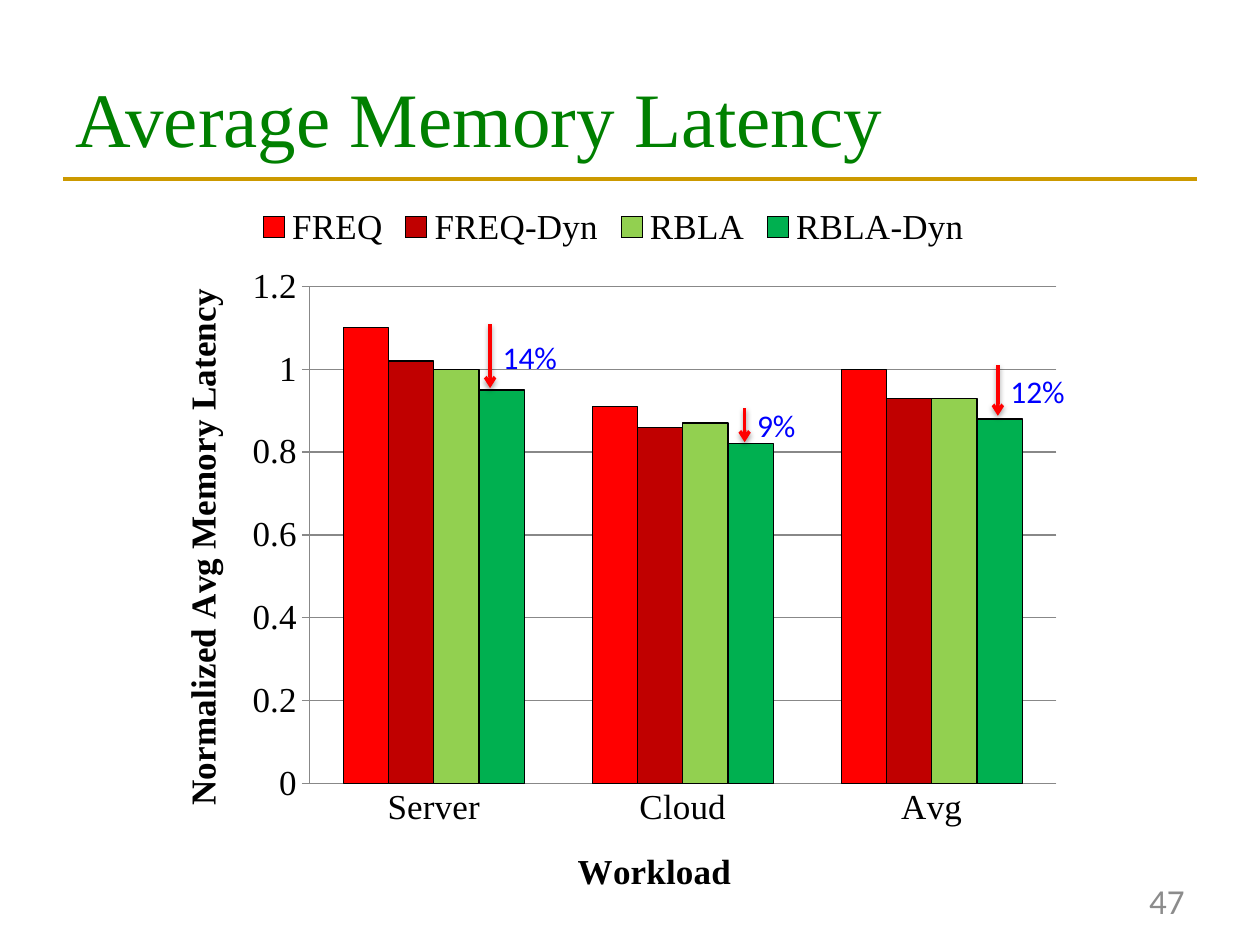
"""Build the average memory latency slide with its clustered column chart."""
from dataclasses import dataclass

from lxml.etree import SubElement
from pptx import Presentation
from pptx.chart.data import CategoryChartData
from pptx.dml.color import RGBColor
from pptx.enum.chart import XL_CHART_TYPE, XL_LEGEND_POSITION, XL_TICK_MARK
from pptx.enum.shapes import MSO_CONNECTOR
from pptx.enum.text import MSO_ANCHOR, PP_ALIGN
from pptx.oxml import parse_xml
from pptx.oxml.ns import nsdecls, qn
from pptx.util import Inches, Pt


@dataclass(frozen=True)
class Theme:
    serif: str = "Times New Roman"
    sans: str = "Calibri"
    title: str = "008000"
    rule: str = "CC9900"
    ink: str = "000000"
    grid: str = "888888"
    number: str = "8C8C8C"
    arrow: str = "FF0000"
    reduction: str = "0000FF"
    title_size: int = 44
    chart_size: int = 20
    reduction_size: int = 18


theme = Theme()


def add_run(paragraph, text, font_name, size, color, bold=False):
    run = paragraph.add_run()
    run.text = text
    run.font.name = font_name
    run.font.size = Pt(size)
    run.font.bold = bold
    run.font.color.rgb = RGBColor.from_string(color)


def add_line(slide, start, end, color, width):
    points = [Inches(value) for value in (*start, *end)]
    line = slide.shapes.add_connector(MSO_CONNECTOR.STRAIGHT, *points)
    line.line.color.rgb = RGBColor.from_string(color)
    line.line.width = Pt(width)
    effects = SubElement(line._element.spPr, qn("a:effectLst"))
    return line, effects


presentation = Presentation()
presentation.slide_width = Inches(10)
presentation.slide_height = Inches(7.5)
slide = presentation.slides.add_slide(presentation.slide_layouts[5])

add_line(slide, (0.5, 1.42), (9.5, 1.42), theme.rule, 2.25)

title = slide.shapes.title
title.left, title.top = Inches(0.5), Inches(0.3)
title.width, title.height = Inches(9), Inches(1.25)
title.text_frame.vertical_anchor = MSO_ANCHOR.MIDDLE
paragraph = title.text_frame.paragraphs[0]
paragraph.alignment = PP_ALIGN.LEFT
add_run(paragraph, "Average Memory Latency", theme.serif, theme.title_size, theme.title)

series_styles = [
    ("FREQ", (1.1, 0.91, 1), "FF0000"),
    ("FREQ-Dyn", (1.02, 0.86, 0.93), "C00000"),
    ("RBLA", (1, 0.87, 0.93), "92D050"),
    ("RBLA-Dyn", (0.95, 0.82, 0.88), "00B050"),
]
chart_data = CategoryChartData()
chart_data.categories = ["Server", "Cloud", "Avg"]
for name, values, color in series_styles:
    chart_data.add_series(name, values)
chart = slide.shapes.add_chart(
    XL_CHART_TYPE.COLUMN_CLUSTERED,
    Inches(1.21), Inches(1.52), Inches(7.32), Inches(5.8), chart_data,
).chart
chart.has_title = False
chart.font.name = theme.serif
chart.font.size = Pt(theme.chart_size)
chart.font.color.rgb = RGBColor.from_string(theme.ink)
chart.has_legend = True
chart.legend.position = XL_LEGEND_POSITION.TOP
chart.legend.include_in_layout = False

plot = chart.plots[0]
plot.gap_width = 150
plot.overlap = 0
plot.vary_by_categories = False
for series, (name, values, color) in zip(plot.series, series_styles):
    series.format.fill.solid()
    series.format.fill.fore_color.rgb = RGBColor.from_string(color)
    series.format.line.color.rgb = RGBColor.from_string(theme.ink)
    series.format.line.width = Pt(0.75)

value_axis, category_axis = chart.value_axis, chart.category_axis
value_axis.minimum_scale = 0
value_axis.maximum_scale = 1.2
value_axis.major_unit = 0.2
value_axis.major_tick_mark = XL_TICK_MARK.OUTSIDE
value_axis.tick_labels.number_format = "General"
value_axis.tick_labels.number_format_is_linked = False
value_axis.has_major_gridlines = True
category_axis.major_tick_mark = XL_TICK_MARK.NONE
for line in (value_axis.major_gridlines.format.line,
             value_axis.format.line, category_axis.format.line):
    line.color.rgb = RGBColor.from_string(theme.grid)
    line.width = Pt(0.75)
for axis, text in ((category_axis, "Workload"),
                   (value_axis, "Normalized Avg Memory Latency")):
    paragraph = axis.axis_title.text_frame.paragraphs[0]
    add_run(paragraph, text, theme.serif, theme.chart_size, theme.ink, bold=True)
title_body = value_axis.axis_title.text_frame._txBody.find(qn("a:bodyPr"))
title_body.set("rot", "-5400000")
title_body.set("vert", "horz")

plot_area = chart._chartSpace.chart.plotArea
for layout in plot_area.findall(qn("c:layout")):
    plot_area.remove(layout)
plot_area.insert(0, parse_xml(
    f'<c:layout {nsdecls("c")}><c:manualLayout><c:layoutTarget val="inner"/>'
    '<c:xMode val="edge"/><c:yMode val="edge"/><c:x val="0.17"/><c:y val="0.13"/>'
    '<c:w val="0.81"/><c:h val="0.68"/></c:manualLayout></c:layout>'
))

number_box = slide.shapes.add_textbox(Inches(7.17), Inches(6.95), Inches(2.33), Inches(0.4))
number_box.text_frame.word_wrap = True
number_box.text_frame.vertical_anchor = MSO_ANCHOR.MIDDLE
paragraph = number_box.text_frame.paragraphs[0]
paragraph.alignment = PP_ALIGN.RIGHT
add_run(paragraph, "47", theme.sans, theme.chart_size, theme.number)

reductions = [
    ("14%", 3.89, 2.57, 3.08, 2.63),
    ("9%", 5.91, 3.24, 3.51, 3.17),
    ("12%", 7.92, 2.9, 3.3, 2.9),
]
for text, left, arrow_top, arrow_bottom, label_top in reductions:
    arrow, effects = add_line(slide, (left, arrow_bottom), (left, arrow_top), theme.arrow, 2)
    SubElement(arrow.line._get_or_add_ln(), qn("a:headEnd"), type="arrow")
    effects.append(parse_xml(
        f'<a:outerShdw {nsdecls("a")} blurRad="{Pt(3.1)}" dist="{Pt(1.6)}" dir="5400000" '
        f'rotWithShape="0"><a:srgbClr val="{theme.ink}"><a:alpha val="38000"/>'
        '</a:srgbClr></a:outerShdw>'
    ))
    label = slide.shapes.add_textbox(Inches(left), Inches(label_top), Inches(0.65), Inches(0.4))
    label.text_frame.word_wrap = True
    add_run(label.text_frame.paragraphs[0], text, theme.sans,
            theme.reduction_size, theme.reduction)

presentation.save("out.pptx")
